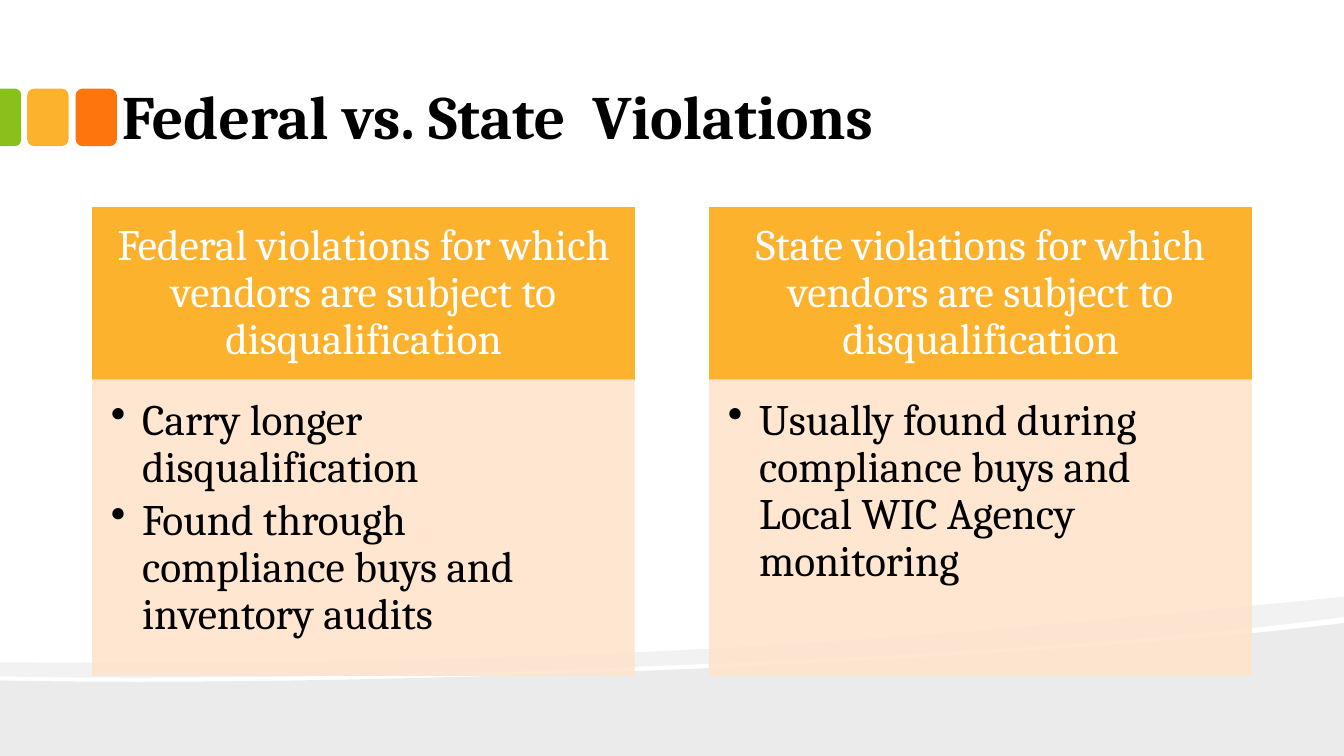
from lxml import etree
from pptx import Presentation
from pptx.dml.color import RGBColor
from pptx.enum.shapes import MSO_SHAPE
from pptx.enum.text import MSO_ANCHOR, PP_ALIGN
from pptx.oxml.ns import qn
from pptx.util import Inches, Pt

FONT = "Cambria"
BLACK, WHITE = "000000", "FFFFFF"
GREEN, AMBER, ORANGE, PEACH = "89C01C", "FCB22C", "FE750E", "FEE4CD"

TITLE = "Federal vs. State  Violations"
COLUMNS = [
    ("Federal violations for which vendors are subject to disqualification",
     ["Carry longer disqualification",
      "Found through compliance buys and inventory audits"]),
    ("State violations for which vendors are subject to disqualification",
     ["Usually found during compliance buys and Local WIC Agency monitoring"]),
]

# Each wave: opacity percent, then a start point followed by lines (one point)
# and Bézier curves (three points), in inches.
WAVES = [
    (8, (13.33, 6.18), [
        [(13.33, 7.5)], [(0, 7.5)], [(0, 6.75)],
        [(3.52, 6.83), (10.42, 6.55), (13.33, 6.18)]]),
    (5, (13.33, 5.92), [
        [(13.33, 6.12)],
        [(12.55, 6.23), (11.49, 6.33), (10.29, 6.41)],
        [(6.98, 6.63), (2.58, 6.77), (0, 6.71)],
        [(0, 6.57)],
        [(6.52, 6.62), (9.71, 6.27), (13.33, 5.92)]]),
]

COLUMN_LEFT, COLUMN_PITCH, COLUMN_WIDTH = 0.92, 6.12, 5.37
HEAD_TOP, HEAD_HEIGHT, BODY_HEIGHT = 2.06, 1.71, 2.93
TAB_TOP, TAB_WIDTH, TAB_HEIGHT, TAB_PITCH = 0.88, 0.41, 0.57, 0.48


def paint(color_format, color, opacity=100):
    """Set a fill's or line's solid colour, with opacity in percent."""
    color_format.solid()
    color_format.fore_color.rgb = RGBColor.from_string(color)
    if opacity < 100:
        for node in color_format._xPr.iter(qn("a:srgbClr")):
            if node.get("val") == color and node.find(qn("a:alpha")) is None:
                etree.SubElement(node, qn("a:alpha"), val=str(opacity * 1000))


def add_block(page, kind, bounds, color, opacity=100, outlined=False):
    block = page.shapes.add_shape(kind, *map(Inches, bounds))
    block.shadow.inherit = False
    if outlined:
        block.line.width = Pt(0.85)
        paint(block.line.fill, color, opacity)
    else:
        block.line.fill.background()
    paint(block.fill, color, opacity)
    return block


def add_wave(page, opacity, start, segments):
    """Draw an outline through all points, then bend the three-point segments."""
    builder = page.shapes.build_freeform(*map(Inches, start))
    builder.add_line_segments(
        [(Inches(x), Inches(y)) for segment in segments for x, y in segment], close=True)
    wave = builder.convert_to_shape()
    wave.shadow.inherit = False
    wave.line.fill.background()
    paint(wave.fill, BLACK, opacity)

    steps = iter(list(wave._element.iter(qn("a:lnTo"))))
    for segment in segments:
        parts = [next(steps) for _ in segment]
        if len(parts) == 3:
            curve = etree.Element(qn("a:cubicBezTo"))
            parts[0].addprevious(curve)
            for part in parts:
                curve.append(part[0])
                part.getparent().remove(part)


def write(shape, lines, size, color, insets, anchor, align=PP_ALIGN.LEFT,
          bold=False, spacing=1.0, after=0, bullets=False):
    frame = shape.text_frame
    frame.word_wrap = True
    frame.vertical_anchor = anchor
    (frame.margin_left, frame.margin_top,
     frame.margin_right, frame.margin_bottom) = map(Inches, insets)
    frame.text = "\n".join(lines)
    for para in frame.paragraphs:
        para.alignment = align
        para.line_spacing = spacing
        para.space_after = Pt(after)
        para.font.name = FONT
        para.font.size = Pt(size)
        para.font.bold = bold
        para.font.color.rgb = RGBColor.from_string(color)
        if bullets:
            para.runs[0].font.size = Pt(size)  # a bullet takes the size of its first run
            properties = para._p.get_or_add_pPr()
            properties.set("marL", str(Inches(0.31)))
            properties.set("indent", str(-Inches(0.31)))
            bullet = etree.Element(qn("a:buChar"), char="•")
            properties.find(qn("a:defRPr")).addprevious(bullet)


def add_column(page, left, heading, points):
    head = add_block(page, MSO_SHAPE.RECTANGLE,
                     (left, HEAD_TOP, COLUMN_WIDTH, HEAD_HEIGHT), AMBER, outlined=True)
    write(head, [heading], 31, WHITE, (0.24, 0.14, 0.24, 0.14), MSO_ANCHOR.MIDDLE,
          align=PP_ALIGN.CENTER, spacing=0.9)
    body = add_block(page, MSO_SHAPE.RECTANGLE,
                     (left, HEAD_TOP + HEAD_HEIGHT, COLUMN_WIDTH, BODY_HEIGHT),
                     PEACH, opacity=90, outlined=True)
    write(body, points, 31, BLACK, (0.18, 0.18, 0.24, 0.27), MSO_ANCHOR.TOP,
          spacing=0.9, after=4.65, bullets=True)


def main():
    deck = Presentation()
    deck.slide_width, deck.slide_height = Inches(13.33), Inches(7.5)
    page = deck.slides.add_slide(deck.slide_layouts[6])

    for wave in WAVES:
        add_wave(page, *wave)

    for index, color in enumerate([AMBER, ORANGE]):
        add_block(page, MSO_SHAPE.ROUNDED_RECTANGLE,
                  (0.27 + index * TAB_PITCH, TAB_TOP, TAB_WIDTH, TAB_HEIGHT), color)
    edge_tab = add_block(page, MSO_SHAPE.ROUND_2_SAME_RECTANGLE,
                         (-0.18, 1.06, TAB_HEIGHT, 0.21), GREEN)
    edge_tab.rotation = 90
    edge_tab.adjustments[0] = 0.29

    title = page.shapes.add_textbox(*map(Inches, (1.08, 0.34, 11.5, 1.24)))
    write(title, [TITLE], 44, BLACK, (0.13, 0.07, 0.13, 0.07), MSO_ANCHOR.BOTTOM, bold=True)

    for index, (heading, points) in enumerate(COLUMNS):
        add_column(page, COLUMN_LEFT + index * COLUMN_PITCH, heading, points)

    deck.save("out.pptx")


if __name__ == "__main__":
    main()
